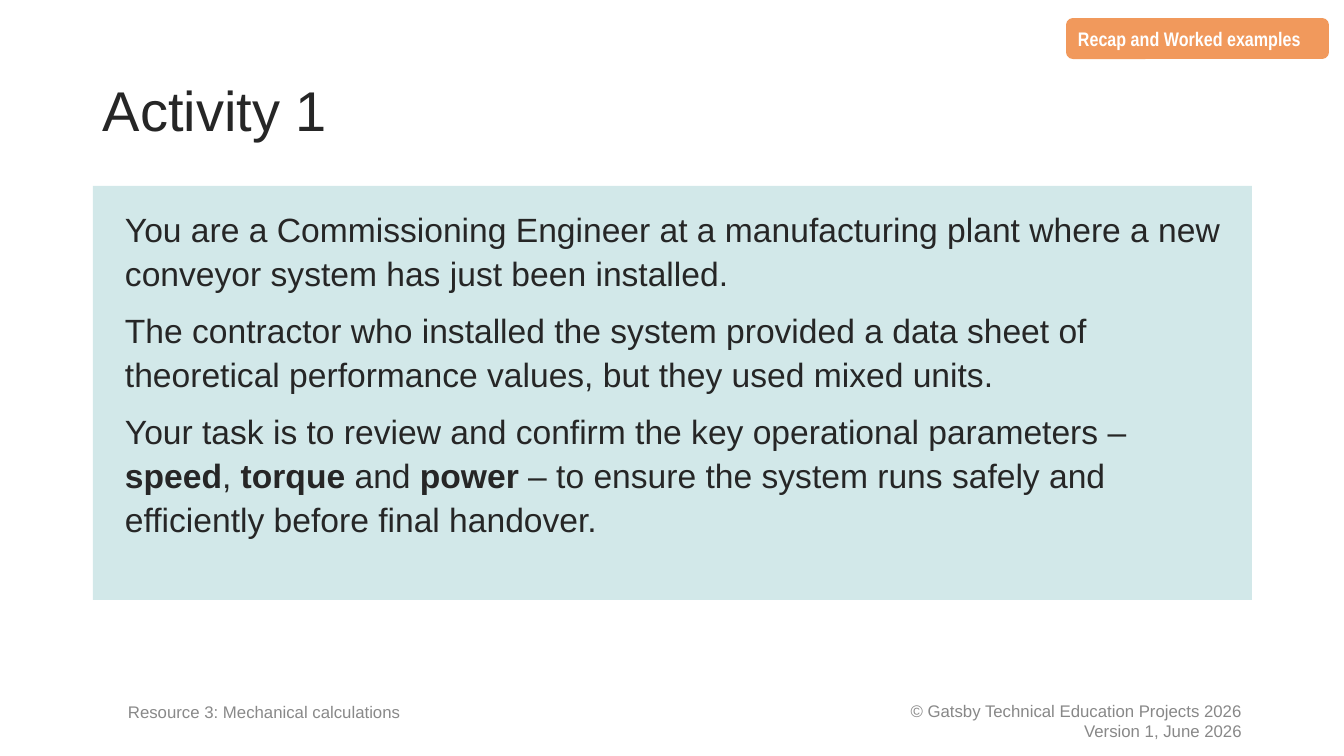
import pptx
import pptx.dml.color
import pptx.enum.shapes
import pptx.enum.text
import pptx.util
from dataclasses import dataclass

# Content: each paragraph is a list of (words, bold) runs
TITLE = "Activity 1"
TAG = "Recap and Worked examples"
BRIEF = [
    [("You are a Commissioning Engineer at a manufacturing plant where a new "
      "conveyor system has just been installed.", False)],
    [("The contractor who installed the system provided a data sheet of "
      "theoretical performance values, but they used mixed units.", False)],
    [("Your task is to review and confirm the key operational parameters – ", False),
     ("speed", True), (", ", False), ("torque", True), (" and ", False),
     ("power", True),
     (" – to ensure the system runs safely and efficiently before final handover.",
      False)],
]
RESOURCE = "Resource 3: Mechanical calculations"
COPYRIGHT = ["© Gatsby Technical Education Projects 2026", "Version 1, June 2026"]


@dataclass(frozen=True)
class Theme:
    font: str = "Arial"
    tag_font: str = "Arial Narrow"
    ink: str = "262626"
    panel: str = "D2E8E9"
    tag: str = "F1995C"
    tag_ink: str = "FFFFFF"
    copyright_ink: str = "888888"
    resource_ink: str = "898989"
    title_size: int = 40
    brief_size: int = 24
    tag_size: int = 14
    footer_size: int = 12


THEME = Theme()

# Layout in px
SLIDE_W, SLIDE_H = 1344, 756
EMU_PER_PX = 12192000 / SLIDE_W
LEFT, WIDTH = 93, 1159
INSETS = (10, 5, 10, 5)
TITLE_BOX = (LEFT, 40, WIDTH, 146)
BRIEF_BOX = (LEFT, 186, WIDTH, 414)
TAG_BOX = (1066, 18, 263, 41)
RESOURCE_BOX = (LEFT, 691, 464, 40)
COPYRIGHT_BOX = (798, 701, 454, 40)

SHAPES = pptx.enum.shapes.MSO_SHAPE
MIDDLE = pptx.enum.text.MSO_ANCHOR.MIDDLE
TOP = pptx.enum.text.MSO_ANCHOR.TOP
ALIGN = pptx.enum.text.PP_ALIGN


def px(length):
    return pptx.util.Emu(round(length * EMU_PER_PX))


def rgb(code):
    return pptx.dml.color.RGBColor.from_string(code)


def write(holder, paragraphs, size, color, font=THEME.font, anchor=MIDDLE,
          insets=INSETS, align=ALIGN.LEFT, line=1.0, gap=0):
    frame = holder.text_frame
    frame.word_wrap = True
    frame.vertical_anchor = anchor
    (frame.margin_left, frame.margin_top,
     frame.margin_right, frame.margin_bottom) = map(px, insets)
    for index, runs in enumerate(paragraphs):
        paragraph = frame.add_paragraph() if index else frame.paragraphs[0]
        paragraph.alignment = align
        paragraph.line_spacing = line
        paragraph.space_before = pptx.util.Pt(gap if index else 0)
        paragraph.font.name = font
        paragraph.font.size = pptx.util.Pt(size)
        paragraph.font.color.rgb = rgb(color)
        for words, bold in runs:
            run = paragraph.add_run()
            run.text = words
            run.font.bold = bold


def add_text(slide, box, paragraphs, size, color, **style):
    write(slide.shapes.add_textbox(*map(px, box)), paragraphs, size, color, **style)


def add_panel(slide, kind, box, fill, paragraphs, size, color, **style):
    panel = slide.shapes.add_shape(kind, *map(px, box))
    panel.shadow.inherit = False
    panel.fill.solid()
    panel.fill.fore_color.rgb = rgb(fill)
    panel.line.fill.background()
    write(panel, paragraphs, size, color, anchor=TOP, line=1.08, **style)


def main():
    deck = pptx.Presentation()
    deck.slide_width, deck.slide_height = px(SLIDE_W), px(SLIDE_H)
    slide = deck.slides.add_slide(deck.slide_layouts[6])

    # Title and task brief
    add_text(slide, TITLE_BOX, [[(TITLE, False)]], THEME.title_size, THEME.ink, line=0.9)
    add_panel(slide, SHAPES.RECTANGLE, BRIEF_BOX, THEME.panel, BRIEF,
              THEME.brief_size, THEME.ink, insets=(32, 20, 20, 20), gap=10)

    # Section tag
    add_panel(slide, SHAPES.FLOWCHART_ALTERNATE_PROCESS, TAG_BOX, THEME.tag,
              [[(TAG, True)]], THEME.tag_size, THEME.tag_ink, font=THEME.tag_font)

    # Footer
    add_text(slide, RESOURCE_BOX, [[(RESOURCE, False)]], THEME.footer_size,
             THEME.resource_ink, insets=(35, 5, 10, 5), line=1.08)
    add_text(slide, COPYRIGHT_BOX, [[(line, False)] for line in COPYRIGHT],
             THEME.footer_size, THEME.copyright_ink, align=ALIGN.RIGHT)

    deck.save("out.pptx")


if __name__ == "__main__":
    main()
